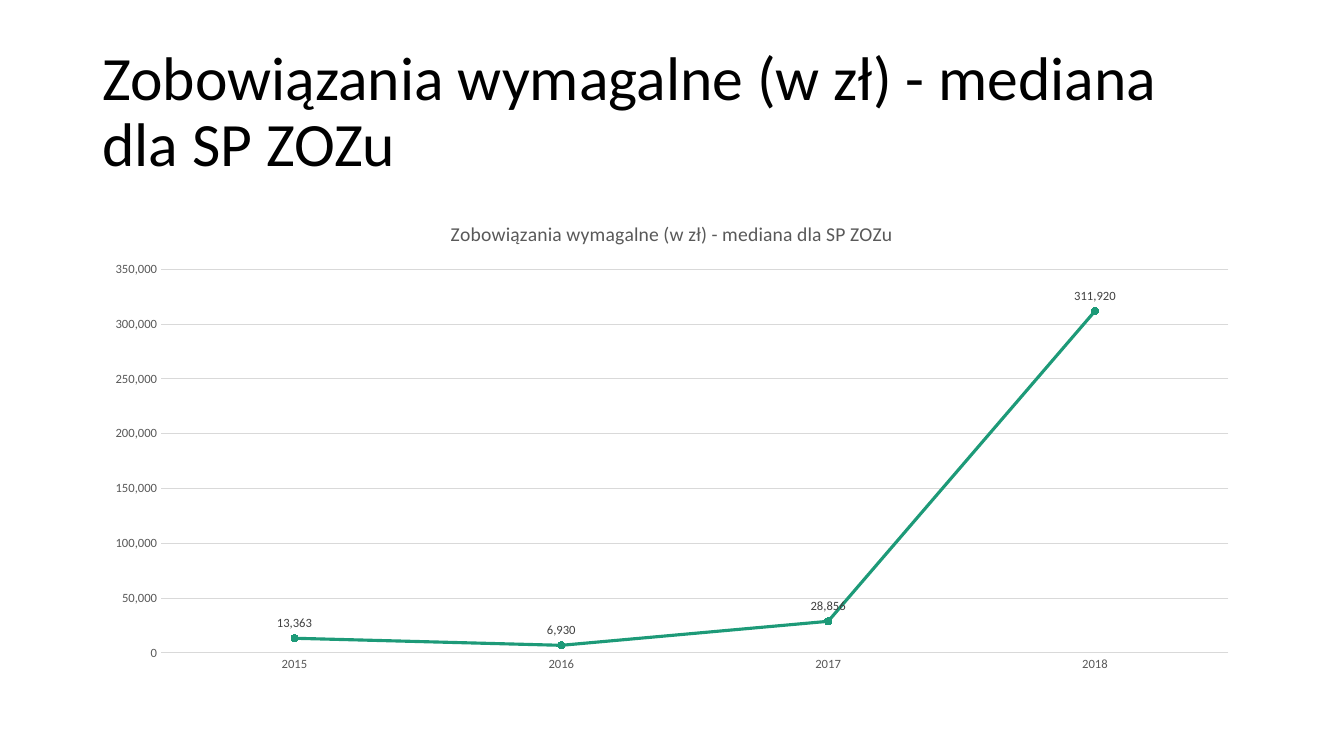
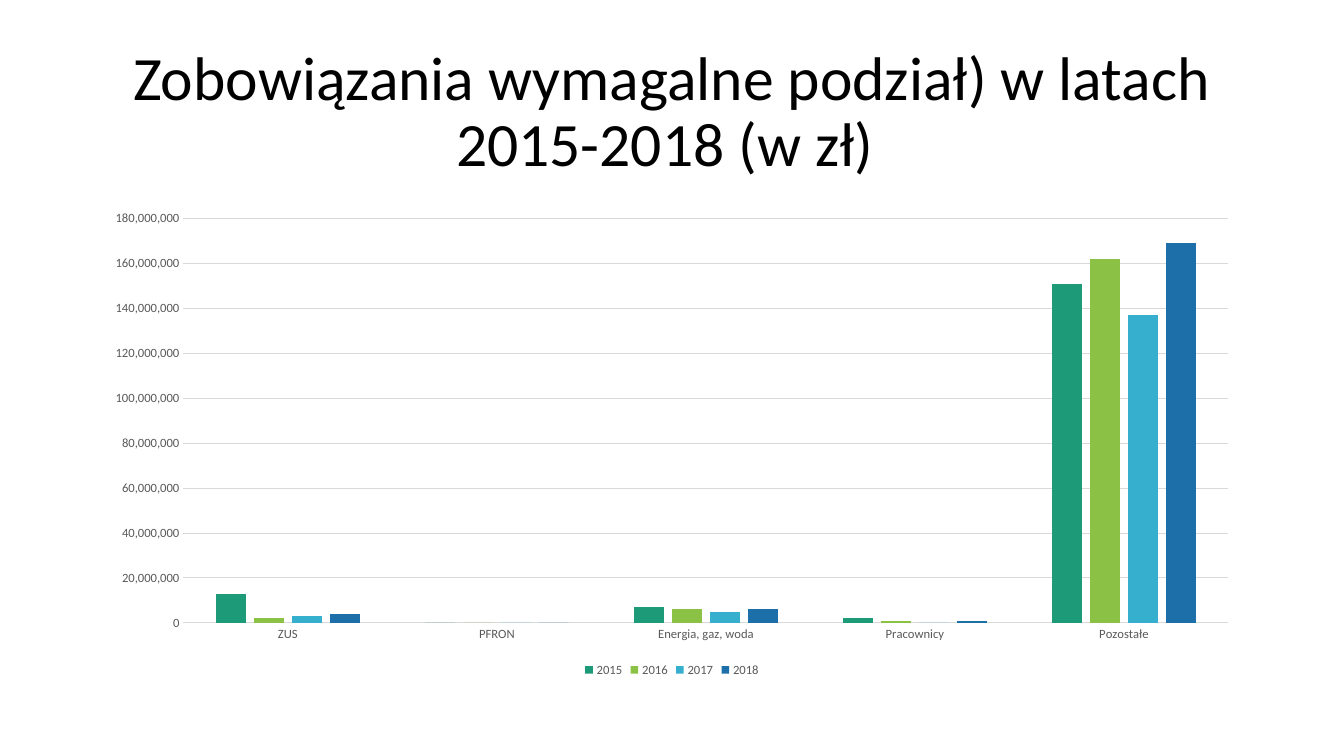
from dataclasses import dataclass

from pptx import Presentation
from pptx.chart.chart import Chart
from pptx.chart.data import CategoryChartData
from pptx.dml.color import RGBColor
from pptx.enum.chart import (XL_CHART_TYPE, XL_LABEL_POSITION, XL_LEGEND_POSITION,
                             XL_MARKER_STYLE, XL_TICK_MARK)
from pptx.enum.text import MSO_ANCHOR, PP_ALIGN
from pptx.presentation import Presentation as Deck
from pptx.slide import Slide
from pptx.text.text import Font
from pptx.util import Emu, Inches, Pt

LINE, COLUMNS = XL_CHART_TYPE.LINE_MARKERS, XL_CHART_TYPE.COLUMN_CLUSTERED
NO_TICK, CIRCLE = XL_TICK_MARK.NONE, XL_MARKER_STYLE.CIRCLE
LABEL_ABOVE, LEGEND_BELOW = XL_LABEL_POSITION.ABOVE, XL_LEGEND_POSITION.BOTTOM
MIDDLE, LEFT, CENTER = MSO_ANCHOR.MIDDLE, PP_ALIGN.LEFT, PP_ALIGN.CENTER

SLIDE_WIDTH, SLIDE_HEIGHT = Inches(13.33), Inches(7.5)
GRID_COLUMNS, GRID_ROWS = 160, 90
BLANK_LAYOUT = 6


@dataclass(frozen=True)
class Theme:
    font: str = "Calibri"
    background: str = "FFFFFF"
    title: str = "000000"
    muted: str = "595959"
    label: str = "404040"
    grid: str = "D9D9D9"
    series: tuple[str, ...] = ("1D9A78", "8BC145", "36AFCE", "1D6FA9")
    title_size: float = 44
    chart_title_size: float = 14
    chart_size: float = 10
    small_size: float = 9
    thin_line: float = 0.75
    data_line: float = 2.25
    marker_size: int = 5
    number_format: str = "#,##0"


@dataclass(frozen=True)
class Area:
    """A rectangle in grid columns and rows."""
    column: float
    row: float
    columns: float
    rows: float

    def box(self) -> tuple[Emu, Emu, Emu, Emu]:
        across, down = SLIDE_WIDTH / GRID_COLUMNS, SLIDE_HEIGHT / GRID_ROWS
        return (Emu(round(self.column * across)), Emu(round(self.row * down)),
                Emu(round(self.columns * across)), Emu(round(self.rows * down)))


@dataclass(frozen=True)
class ChartSlide:
    title: str
    alignment: PP_ALIGN
    kind: XL_CHART_TYPE
    categories: tuple[str, ...]
    series: dict[str, tuple[int, ...]]
    chart_title: str = ""


THEME = Theme()
TITLE_AREA = Area(11, 4.8, 138, 17.4)
CHART_AREA = Area(11, 24, 138, 57.1)
MEDIAN_TITLE = "Zobowiązania wymagalne (w zł) - mediana dla SP ZOZu"

SLIDES = (
    ChartSlide(
        MEDIAN_TITLE, LEFT, LINE, ("2015", "2016", "2017", "2018"),
        {"Series 1": (13363, 6930, 28856, 311920)}, MEDIAN_TITLE),
    ChartSlide(
        "Zobowiązania wymagalne podział) w latach 2015-2018 (w zł) ", CENTER, COLUMNS,
        ("ZUS", "PFRON", "Energia, gaz, woda", "Pracownicy", "Pozostałe"),
        {"2015": (13000000, 0, 7000000, 2000000, 151000000),
         "2016": (2000000, 0, 6000000, 1000000, 162000000),
         "2017": (3000000, 0, 5000000, 0, 137000000),
         "2018": (4000000, 0, 6000000, 1000000, 169000000)}),
)


def rgb(color: str) -> RGBColor:
    return RGBColor.from_string(color)


def style_font(font: Font, size: float, color: str) -> None:
    font.name, font.size, font.bold = THEME.font, Pt(size), False
    font.color.rgb = rgb(color)


def add_title(slide: Slide, text: str, alignment: PP_ALIGN) -> None:
    frame = slide.shapes.add_textbox(*TITLE_AREA.box()).text_frame
    frame.word_wrap, frame.vertical_anchor = True, MIDDLE
    paragraph = frame.paragraphs[0]
    paragraph.text, paragraph.alignment, paragraph.line_spacing = text, alignment, 0.9
    style_font(paragraph.font, THEME.title_size, THEME.title)


def style_axes(chart: Chart) -> None:
    for axis in (chart.category_axis, chart.value_axis):
        axis.major_tick_mark = axis.minor_tick_mark = NO_TICK
        style_font(axis.tick_labels.font, THEME.small_size, THEME.muted)
    chart.value_axis.format.line.fill.background()
    chart.value_axis.has_major_gridlines = True
    labels = chart.value_axis.tick_labels
    labels.number_format, labels.number_format_is_linked = THEME.number_format, False
    for line in (chart.category_axis.format.line,
                 chart.value_axis.major_gridlines.format.line):
        line.color.rgb, line.width = rgb(THEME.grid), Pt(THEME.thin_line)


def style_lines(chart: Chart) -> None:
    for series, color in zip(chart.plots[0].series, THEME.series):
        series.smooth = False
        series.format.line.color.rgb = rgb(color)
        series.format.line.width = Pt(THEME.data_line)
        marker = series.marker
        marker.style, marker.size = CIRCLE, THEME.marker_size
        marker.format.fill.solid()
        marker.format.fill.fore_color.rgb = rgb(color)
        marker.format.line.color.rgb = rgb(color)
        labels = series.data_labels
        labels.show_value, labels.position = True, LABEL_ABOVE
        labels.number_format, labels.number_format_is_linked = THEME.number_format, False
        style_font(labels.font, THEME.small_size, THEME.label)


def style_columns(chart: Chart) -> None:
    plot = chart.plots[0]
    plot.gap_width, plot.overlap = 219, -27
    for series, color in zip(plot.series, THEME.series):
        series.format.fill.solid()
        series.format.fill.fore_color.rgb = rgb(color)
    chart.has_legend = True
    chart.legend.position, chart.legend.include_in_layout = LEGEND_BELOW, False
    style_font(chart.legend.font, THEME.small_size, THEME.muted)


def add_chart(slide: Slide, content: ChartSlide) -> None:
    data = CategoryChartData(number_format=THEME.number_format)
    data.categories = content.categories
    for name, values in content.series.items():
        data.add_series(name, values)
    chart = slide.shapes.add_chart(content.kind, *CHART_AREA.box(), data).chart
    style_font(chart.font, THEME.chart_size, THEME.title)
    chart.plots[0].vary_by_categories = False
    chart.has_legend = False
    # Chart heading
    chart.has_title = bool(content.chart_title)
    if content.chart_title:
        chart.chart_title.include_in_layout = False
        paragraph = chart.chart_title.text_frame.paragraphs[0]
        paragraph.text = content.chart_title
        style_font(paragraph.font, THEME.chart_title_size, THEME.muted)
    # Axes and data
    style_axes(chart)
    if content.kind == LINE:
        style_lines(chart)
    else:
        style_columns(chart)


def add_chart_slide(presentation: Deck, content: ChartSlide) -> None:
    slide = presentation.slides.add_slide(presentation.slide_layouts[BLANK_LAYOUT])
    slide.background.fill.solid()
    slide.background.fill.fore_color.rgb = rgb(THEME.background)
    add_title(slide, content.title, content.alignment)
    add_chart(slide, content)


def main() -> None:
    presentation = Presentation()
    presentation.slide_width, presentation.slide_height = SLIDE_WIDTH, SLIDE_HEIGHT
    for content in SLIDES:
        add_chart_slide(presentation, content)
    presentation.save("out.pptx")


if __name__ == "__main__":
    main()
